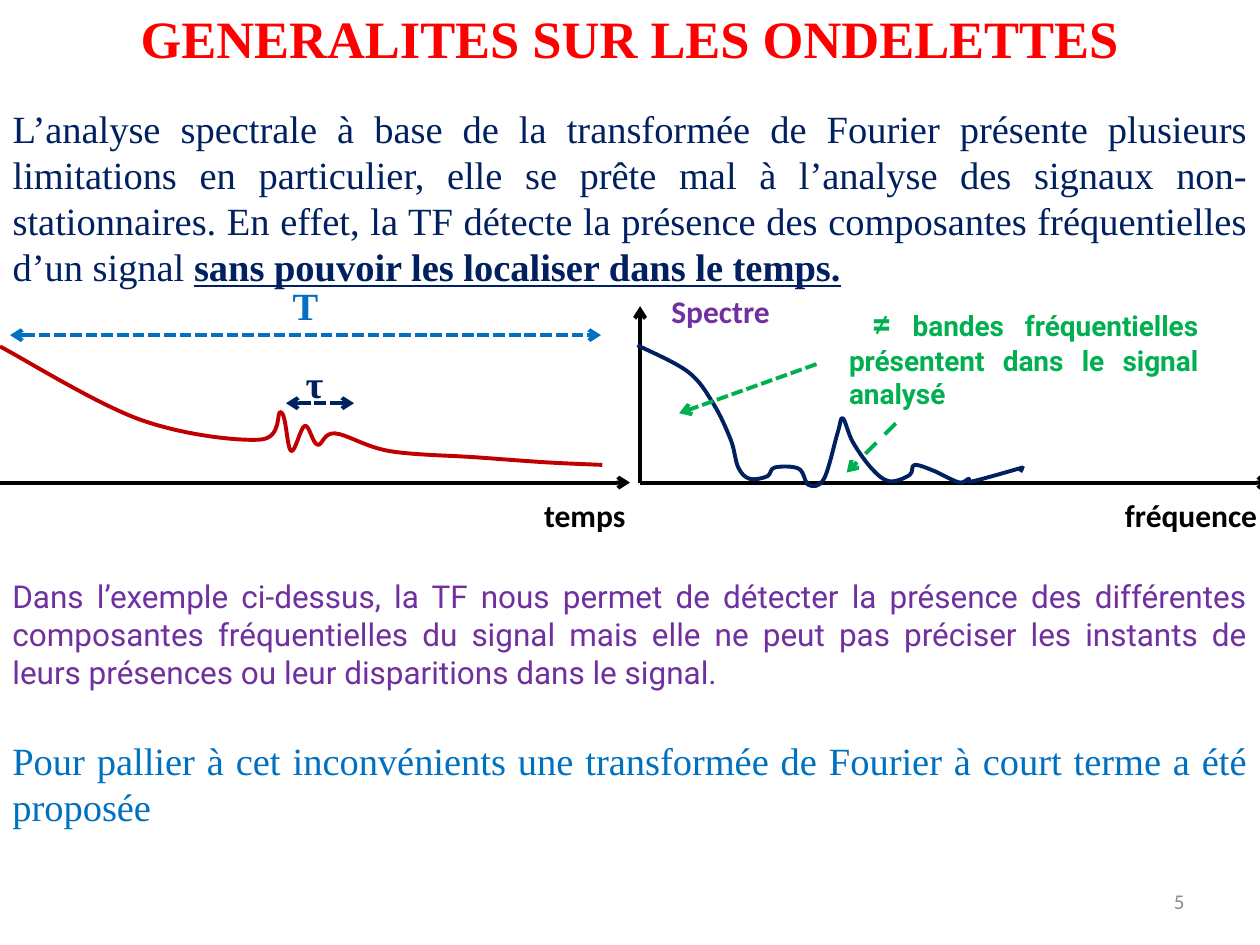
from lxml import etree
from pptx import Presentation
from pptx.dml.color import RGBColor
from pptx.enum.dml import MSO_LINE
from pptx.enum.shapes import MSO_CONNECTOR
from pptx.enum.text import MSO_ANCHOR, MSO_AUTO_SIZE, PP_ALIGN
from pptx.oxml.ns import qn
from pptx.util import Inches, Pt

STRAIGHT = MSO_CONNECTOR.STRAIGHT
SQUARE_DASH, DASH = MSO_LINE.SQUARE_DOT, MSO_LINE.DASH
TOP, MIDDLE = MSO_ANCHOR.TOP, MSO_ANCHOR.MIDDLE
NO_AUTOFIT = MSO_AUTO_SIZE.NONE
LEFT, CENTER, RIGHT, JUSTIFY = PP_ALIGN.LEFT, PP_ALIGN.CENTER, PP_ALIGN.RIGHT, PP_ALIGN.JUSTIFY
SERIF, SANS, LABEL = "Times New Roman", "Roboto", "Calibri"
NAVY, BLUE, GREEN, PURPLE = "002060", "0070C0", "00B050", "7030A0"
RED, DARK_RED, BLACK, GREY = "FF0000", "C00000", "000000", "8C8C8C"
LINE_WIDTH = Pt(2.25)

SIGNAL = [
    (0, 0.32), (1.11, 0.9), (2.06, 1.06), (2.23, 0.84), (2.31, 1.15), (2.42, 0.95),
    (2.52, 1.1), (2.66, 1.01), (3.09, 1.15), (3.78, 1.2), (4.34, 1.24), (4.78, 1.26),
    (4.78, 1.26),
]
SPECTRUM = [
    (-0.02, 0.31), (0.38, 0.52), (0.58, 0.77), (0.72, 1.06), (0.78, 1.28), (0.87, 1.37),
    (1.01, 1.35), (1.07, 1.28), (1.26, 1.29), (1.34, 1.42), (1.46, 1.37), (1.57, 1),
    (1.61, 0.89), (1.69, 1.08), (1.84, 1.29), (1.98, 1.39), (2.14, 1.34), (2.18, 1.26),
    (2.34, 1.31), (2.4, 1.34), (2.54, 1.4), (2.61, 1.37), (2.64, 1.39), (3.04, 1.28),
    (3.04, 1.28), (3.01, 1.29), (3.04, 1.31),
]


def color(hex_value):
    return RGBColor.from_string(hex_value)


def add_run(paragraph, text, size, font, hex_value, bold=False, underline=False):
    run = paragraph.add_run()
    run.text = text
    run.font.size = Pt(size)
    run.font.name = font
    run.font.color.rgb = color(hex_value)
    run.font.bold = bold
    run.font.underline = underline


def place(shape, left, top, width, height):
    shape.left, shape.top = Inches(left), Inches(top)
    shape.width, shape.height = Inches(width), Inches(height)


def prepare_frame(shape, align, anchor=TOP):
    frame = shape.text_frame
    frame.word_wrap = True
    frame.auto_size = NO_AUTOFIT
    frame.vertical_anchor = anchor
    frame.paragraphs[0].alignment = align
    return frame


def add_text(slide, box, runs, align=LEFT, anchor=TOP):
    text_box = slide.shapes.add_textbox(*(Inches(length) for length in box))
    frame = prepare_frame(text_box, align, anchor)
    for run in runs:
        add_run(frame.paragraphs[0], *run)
    return frame


def add_arrow(slide, start, end, hex_value, dash=None, double=False):
    arrow = slide.shapes.add_connector(STRAIGHT, *(Inches(v) for v in (*start, *end)))
    arrow.line.color.rgb = color(hex_value)
    arrow.line.width = LINE_WIDTH
    if dash:
        arrow.line.dash_style = dash
    outline = arrow.line._get_or_add_ln()
    for tag in ("a:headEnd", "a:tailEnd") if double else ("a:tailEnd",):
        etree.SubElement(outline, qn(tag), type="arrow")
    etree.SubElement(arrow._element.spPr, qn("a:effectLst"))


def smooth_segments(curve):
    points = [(int(pt.get("x")), int(pt.get("y"))) for pt in curve._element.iter(qn("a:pt"))]
    padded = [points[0], *points, points[-1]]
    segments = list(curve._element.iter(qn("a:lnTo")))
    for segment, before, start, end, after in zip(
            segments, padded, padded[1:], padded[2:], padded[3:]):
        if start == end:
            continue
        leaving = [s + (e - b) / 6 for b, s, e in zip(before, start, end)]
        arriving = [e - (a - s) / 6 for s, e, a in zip(start, end, after)]
        bezier = etree.Element(qn("a:cubicBezTo"))
        for x, y in (leaving, arriving, end):
            etree.SubElement(bezier, qn("a:pt"), x=str(round(x)), y=str(round(y)))
        segment.getparent().replace(segment, bezier)


def add_curve(slide, left, top, anchors, hex_value):
    start, *others = [(Inches(left + x), Inches(top + y)) for x, y in anchors]
    builder = slide.shapes.build_freeform(*start)
    builder.add_line_segments(others, close=False)
    curve = builder.convert_to_shape()
    smooth_segments(curve)
    curve.shadow.inherit = False
    curve.fill.background()
    curve.line.color.rgb = color(hex_value)
    curve.line.width = LINE_WIDTH


def fill_title(slide, *box):
    title = slide.shapes.title
    place(title, *box)
    frame = prepare_frame(title, CENTER)
    add_run(frame.paragraphs[0], "GENERALITES SUR LES ONDELETTES", 30, SERIF, RED, True)


def fill_introduction(slide, *box):
    body = slide.placeholders[1]
    place(body, *box)
    paragraph = prepare_frame(body, JUSTIFY).paragraphs[0]
    paragraph.space_before = Pt(0)
    properties = paragraph._p.get_or_add_pPr()
    properties.set("marL", "0")
    properties.set("indent", "0")
    etree.SubElement(properties, qn("a:buNone"))
    add_run(paragraph, "L’analyse spectrale à base de la transformée de Fourier présente "
            "plusieurs limitations en particulier, elle se prête mal à l’analyse des signaux "
            "non-stationnaires. En effet, la TF détecte la présence des composantes "
            "fréquentielles d’un signal ", 22, SERIF, NAVY)
    add_run(paragraph, "sans pouvoir les localiser dans le temps.", 22, SERIF, NAVY, True, True)


def draw_time_signal(slide, left, top, width, height):
    base = top + height
    add_arrow(slide, (left, base), (left + width, base), BLACK)
    add_curve(slide, left, top, SIGNAL, DARK_RED)
    add_arrow(slide, (left + 2.27, top + 0.77), (left + 2.81, top + 0.77), NAVY,
              SQUARE_DASH, True)
    add_text(slide, (left + 2.27, top + 0.38, 0.47, 0.47),
             [(" ", 18, LABEL, BLACK), ("τ", 22, SERIF, NAVY, True)])
    add_arrow(slide, (left + 0.08, top + 0.23), (left + 4.77, top + 0.23), BLUE,
              SQUARE_DASH, True)
    add_text(slide, (left + 1.88, top - 0.24, 1.09, 0.47),
             [("T", 22, SERIF, BLUE, True)], CENTER)
    add_text(slide, (left + width - 0.78, base + 0.06, 1.02, 0.4),
             [("temps", 18, LABEL, BLACK, True)])


def draw_spectrum(slide, left, top, width, height):
    base = top + height
    add_arrow(slide, (left, base), (left + width, base), BLACK)
    add_arrow(slide, (left, base), (left, top), BLACK)
    add_text(slide, (left + width - 1.25, base + 0.06, 1.25, 0.4),
             [("fréquence", 18, LABEL, BLACK, True)])
    add_text(slide, (left + 0.15, top - 0.16, 1.02, 0.4),
             [("Spectre", 18, LABEL, PURPLE, True)])
    add_curve(slide, left, top, SPECTRUM, NAVY)
    add_text(slide, (left + 1.56, top - 0.09, 2.97, 0.98),
             [(" ≠", 20, SANS, GREEN, True),
              (" bandes fréquentielles présentent dans le signal analysé",
               16, SANS, GREEN, True)], JUSTIFY)
    add_arrow(slide, (left + 1.4, top + 0.46), (left + 0.31, top + 0.85), GREEN, SQUARE_DASH)
    add_arrow(slide, (left + 2.03, top + 0.93), (left + 1.64, top + 1.32), GREEN, DASH)


def add_conclusion(slide, *box):
    example = ("Dans l’exemple ci-dessus, la TF nous permet de détecter la présence des "
               "différentes composantes fréquentielles du signal mais elle ne peut pas "
               "préciser les instants de leurs présences ou leur disparitions dans le signal.")
    frame = add_text(slide, box, [(example, 18, SANS, PURPLE)], JUSTIFY)
    remedy = frame.add_paragraph()
    remedy.alignment = JUSTIFY
    remedy.space_before = Pt(26.5)
    add_run(remedy, "Pour pallier à cet inconvénients une transformée de Fourier à court "
            "terme a été proposée", 22, SERIF, BLUE)


def add_page_number(slide, *box):
    add_text(slide, box, [("5", 12, LABEL, GREY)], RIGHT, MIDDLE)


def main():
    presentation = Presentation()
    presentation.slide_width, presentation.slide_height = Inches(10), Inches(7.5)
    slide = presentation.slides.add_slide(presentation.slide_layouts[1])
    fill_title(slide, 0, 0, 10, 0.61)
    fill_introduction(slide, 0, 0.78, 10, 4.17)
    draw_time_signal(slide, 0, 2.43, 5, 1.4)
    draw_spectrum(slide, 5.08, 2.43, 5, 1.4)
    add_conclusion(slide, 0, 4.53, 10, 2.12)
    add_page_number(slide, 7.17, 6.95, 2.33, 0.4)
    presentation.save("out.pptx")


if __name__ == "__main__":
    main()
